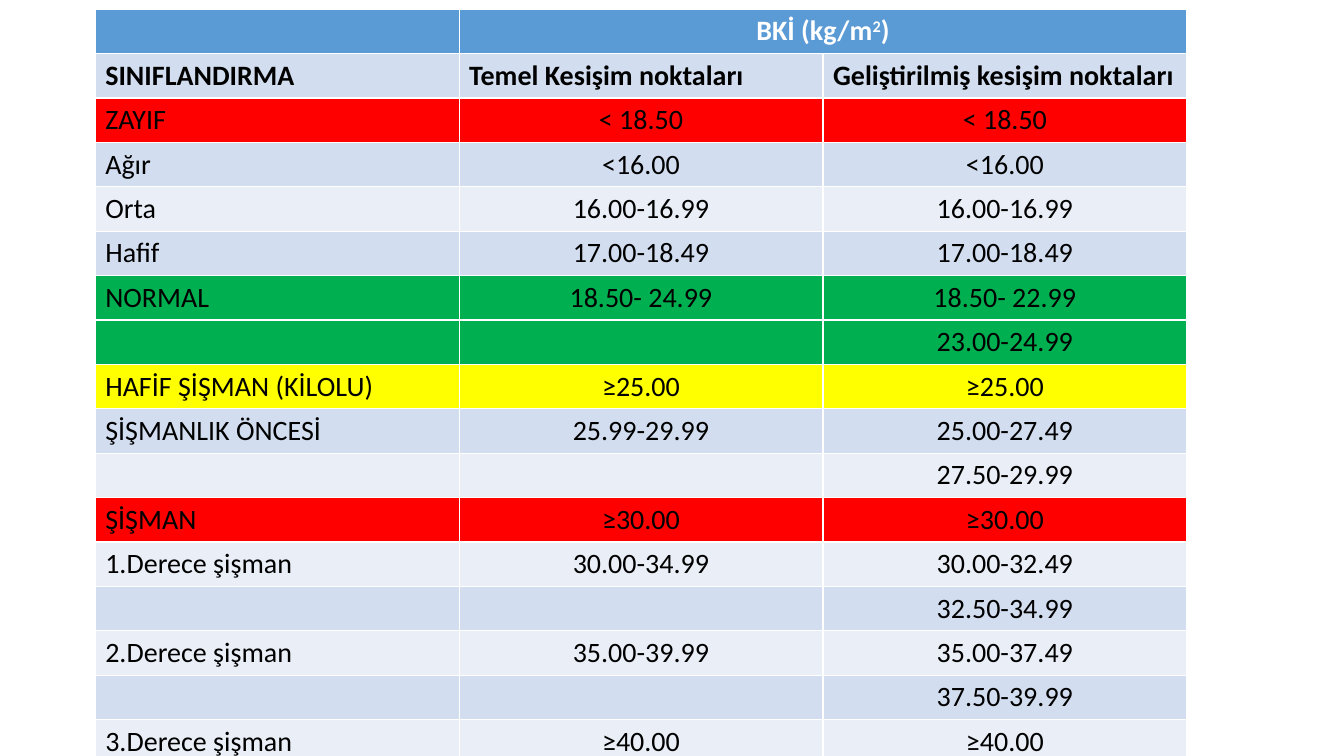
import pptx
import pptx.util
import pptx.dml.color
import pptx.enum.text

Cm = pptx.util.Cm
RGB = pptx.dml.color.RGBColor
ALIGN = pptx.enum.text.PP_ALIGN

BLUE = RGB(0x5B, 0x9B, 0xD5)
DARK = RGB(0xD2, 0xDE, 0xEF)
LIGHT = RGB(0xEA, 0xEF, 0xF7)
RED = RGB(0xFF, 0x00, 0x00)
GREEN = RGB(0x00, 0xB0, 0x50)
YELLOW = RGB(0xFF, 0xFF, 0x00)
WHITE = RGB(0xFF, 0xFF, 0xFF)
BLACK = RGB(0x00, 0x00, 0x00)

# Class, basic cut-off, extended cut-off
ROWS = [
    ("", "BKİ (kg/m", ""),
    ("SINIFLANDIRMA", "Temel Kesişim noktaları", "Geliştirilmiş kesişim noktaları"),
    ("ZAYIF", "< 18.50", "< 18.50"),
    ("Ağır", "<16.00", "<16.00"),
    ("Orta", "16.00-16.99", "16.00-16.99"),
    ("Hafif", "17.00-18.49", "17.00-18.49"),
    ("NORMAL", "18.50- 24.99", "18.50- 22.99"),
    ("", "", "23.00-24.99"),
    ("HAFİF ŞİŞMAN (KİLOLU)", "≥25.00", "≥25.00"),
    ("ŞİŞMANLIK ÖNCESİ", "25.99-29.99", "25.00-27.49"),
    ("", "", "27.50-29.99"),
    ("ŞİŞMAN", "≥30.00", "≥30.00"),
    ("1.Derece şişman", "30.00-34.99", "30.00-32.49"),
    ("", "", "32.50-34.99"),
    ("2.Derece şişman", "35.00-39.99", "35.00-37.49"),
    ("", "", "37.50-39.99"),
    ("3.Derece şişman", "≥40.00", "≥40.00"),
]
# Rows that leave the banding
MARKS = {0: BLUE, 2: RED, 6: GREEN, 7: GREEN, 8: YELLOW, 11: RED}


def style(cell, row, col):
    """Fill a cell and format its text by its place in the table."""
    cell.fill.solid()
    cell.fill.fore_color.rgb = MARKS.get(row, DARK if row % 2 else LIGHT)
    para = cell.text_frame.paragraphs[0]
    if col and row != 1:
        para.alignment = ALIGN.CENTER
    for run in para.runs:
        run.font.name = "Calibri"
        run.font.size = pptx.util.Pt(20)
        run.font.bold = row < 2
        run.font.color.rgb = BLACK if row else WHITE


def add_grid(slide, left, top, width, height):
    """Draw the body mass table in the given box."""
    grid = slide.shapes.add_table(len(ROWS), 3, left, top, width, height).table

    # Unit heading over both cut-off columns, with a raised 2
    head = grid.cell(0, 1)
    head.merge(grid.cell(0, 2))
    for row, texts in enumerate(ROWS):
        for col, text in enumerate(texts):
            cell = grid.cell(row, col)
            if text:
                cell.text_frame.text = text
            if cell is not None and (row, col) == (0, 1):
                para = cell.text_frame.paragraphs[0]
                power = para.add_run()
                power.text = "2"
                power.font._element.set("baseline", "30000")
                para.add_run().text = ")"
            style(cell, row, col)


def main():
    deck = pptx.Presentation()
    deck.slide_width = Cm(33.87)
    deck.slide_height = Cm(19.05)
    slide = deck.slides.add_slide(deck.slide_layouts[6])
    add_grid(slide, Cm(2.4), Cm(0.23), Cm(27.51), Cm(17.7))
    deck.save("out.pptx")


if __name__ == "__main__":
    main()
